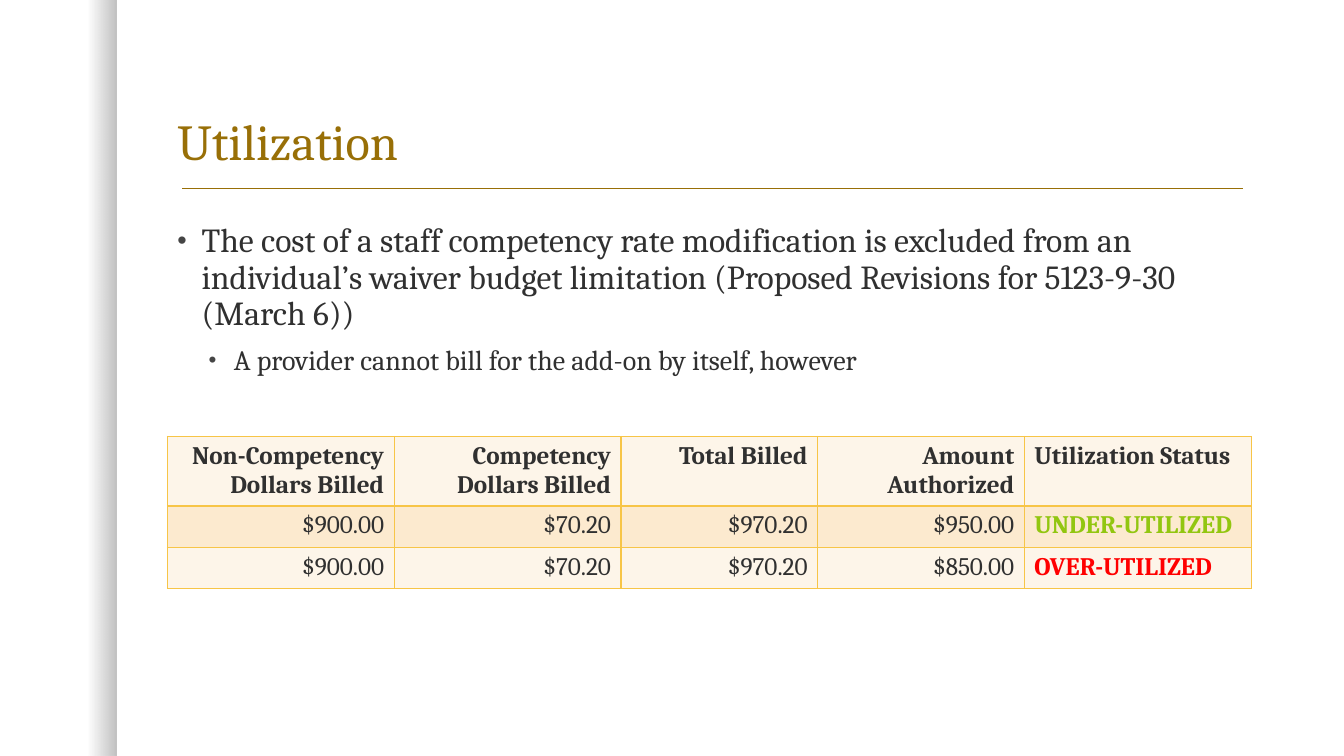
from dataclasses import dataclass

from lxml import etree
from pptx import Presentation
from pptx.dml.color import RGBColor
from pptx.enum.shapes import MSO_CONNECTOR, MSO_SHAPE
from pptx.enum.text import MSO_ANCHOR, MSO_AUTO_SIZE, PP_ALIGN
from pptx.oxml.ns import qn
from pptx.util import Inches, Pt

STRAIGHT = MSO_CONNECTOR.STRAIGHT
RECTANGLE = MSO_SHAPE.RECTANGLE
BOTTOM, TOP = MSO_ANCHOR.BOTTOM, MSO_ANCHOR.TOP
NO_AUTOFIT = MSO_AUTO_SIZE.NONE
LEFT, RIGHT = PP_ALIGN.LEFT, PP_ALIGN.RIGHT


@dataclass(frozen=True)
class Theme:
    font: str = "Cambria"
    title: str = "986F07"
    text: str = "303030"
    bullet: str = "454545"
    shadow: str = "000000"
    border: str = "F7C547"
    light: str = "FDF5E9"
    band: str = "FCEACF"
    under: str = "92C610"
    over: str = "FF0000"
    title_size: int = 36
    body_sizes: tuple = (24, 20)
    table_size: int = 18


THEME = Theme()
CONTENT_LEFT, CONTENT_WIDTH = 1.66, 10.75

BULLETS = [
    (0, "The cost of a staff competency rate modification is excluded from an "
        "individual’s waiver budget limitation (Proposed Revisions for "
        "5123-9-30 (March 6))"),
    (1, "A provider cannot bill for the add-on by itself, however"),
]
BULLET_MARGINS = (0.24, 0.56)
BULLET_HANGS = (0.24, 0.25)

TABLE_ROWS = [
    ("Non-Competency Dollars Billed", "Competency Dollars Billed",
     "Total Billed", "Amount Authorized", "Utilization Status"),
    ("$900.00", "$70.20", "$970.20", "$950.00", "UNDER-UTILIZED"),
    ("$900.00", "$70.20", "$970.20", "$850.00", "OVER-UTILIZED"),
]
COLUMN_WIDTHS = (2.25, 2.25, 1.95, 2.05, 2.25)
ROW_HEIGHTS = (0.69, 0.41, 0.41)
STATUS_COLORS = {"UNDER-UTILIZED": THEME.under, "OVER-UTILIZED": THEME.over}


def rgb(value):
    return RGBColor.from_string(value)


def add_xml(parent, tag, **attributes):
    return etree.SubElement(parent, qn(tag), attributes)


def add_run(p, text, size, color, bold=False):
    r = p.add_run()
    r.text = text
    r.font.name = THEME.font
    r.font.size = Pt(size)
    r.font.bold = bold
    r.font.color.rgb = rgb(color)


def place(shape, top, height, anchor):
    """Move a placeholder into the content column and return its text frame."""
    shape.left, shape.top = Inches(CONTENT_LEFT), Inches(top)
    shape.width, shape.height = Inches(CONTENT_WIDTH), Inches(height)
    tf = shape.text_frame
    tf.auto_size = NO_AUTOFIT
    tf.vertical_anchor = anchor
    return tf


def add_edge_shadow(s):
    sp = s.shapes.add_shape(RECTANGLE, 0, 0, Inches(1.16), Inches(7.5))
    sp.shadow.inherit = False
    sp.line.fill.background()
    sp.fill.gradient()
    sp.fill.gradient_angle = 0
    for stop, position, alpha in zip(sp.fill.gradient_stops, (0.75, 1), (0, 25)):
        stop.position = position
        stop.color.rgb = rgb(THEME.shadow)
    for color, alpha in zip(sp.element.spPr.iter(qn("a:srgbClr")), (0, 25)):
        add_xml(color, "a:alpha", val=str(alpha * 1000))


def add_title_rule(s):
    line = s.shapes.add_connector(
        STRAIGHT, Inches(1.81), Inches(1.87), Inches(12.33), Inches(1.87))
    line.line.color.rgb = rgb(THEME.title)
    line.line.width = Pt(1)
    add_xml(line.element.spPr, "a:effectLst")


def fill_title(s, text):
    p = place(s.shapes.title, 0.42, 1.33, BOTTOM).paragraphs[0]
    p.alignment = LEFT
    p.line_spacing = 0.9
    add_run(p, text, THEME.title_size, THEME.title)


def set_bullet(p, level):
    pPr = p._p.get_or_add_pPr()
    pPr.set("marL", str(Inches(BULLET_MARGINS[level])))
    pPr.set("indent", str(-Inches(BULLET_HANGS[level])))
    add_xml(add_xml(pPr, "a:buClr"), "a:srgbClr", val=THEME.bullet)
    add_xml(pPr, "a:buSzPct", val="80000")
    add_xml(pPr, "a:buFont", typeface="Arial")
    add_xml(pPr, "a:buChar", char="•")


def fill_body(s, bullets):
    tf = place(s.placeholders[1], 2.17, 4.58, TOP)
    for i, (level, text) in enumerate(bullets):
        p = tf.add_paragraph() if i else tf.paragraphs[0]
        p.level = level
        p.line_spacing = 0.9
        p.space_before = Pt(10 if i else 0)
        set_bullet(p, level)
        add_run(p, text, THEME.body_sizes[level], THEME.text)


def set_borders(cell):
    tcPr = cell._tc.get_or_add_tcPr()
    for side in ("a:lnL", "a:lnR", "a:lnT", "a:lnB"):
        ln = add_xml(tcPr, side, w=str(Pt(1)))
        add_xml(add_xml(ln, "a:solidFill"), "a:srgbClr", val=THEME.border)


def add_utilization_table(s):
    table = s.shapes.add_table(
        len(TABLE_ROWS), len(COLUMN_WIDTHS), Inches(CONTENT_LEFT), Inches(4.33),
        Inches(CONTENT_WIDTH), Inches(sum(ROW_HEIGHTS))).table
    table.first_row = table.horz_banding = False
    for column, width in zip(table.columns, COLUMN_WIDTHS):
        column.width = Inches(width)
    for row, height in zip(table.rows, ROW_HEIGHTS):
        row.height = Inches(height)
    status_column = len(COLUMN_WIDTHS) - 1
    for i, values in enumerate(TABLE_ROWS):
        for j, text in enumerate(values):
            cell = table.cell(i, j)
            set_borders(cell)
            cell.fill.solid()
            cell.fill.fore_color.rgb = rgb(THEME.band if i % 2 else THEME.light)
            p = cell.text_frame.paragraphs[0]
            p.alignment = LEFT if j == status_column else RIGHT
            add_run(p, text, THEME.table_size, STATUS_COLORS.get(text, THEME.text),
                    bold=i == 0 or j == status_column)


def main():
    prs = Presentation()
    prs.slide_width, prs.slide_height = Inches(13.33), Inches(7.5)
    s = prs.slides.add_slide(prs.slide_layouts[1])
    add_edge_shadow(s)
    add_title_rule(s)
    fill_title(s, "Utilization")
    fill_body(s, BULLETS)
    add_utilization_table(s)
    prs.save("out.pptx")


if __name__ == "__main__":
    main()
